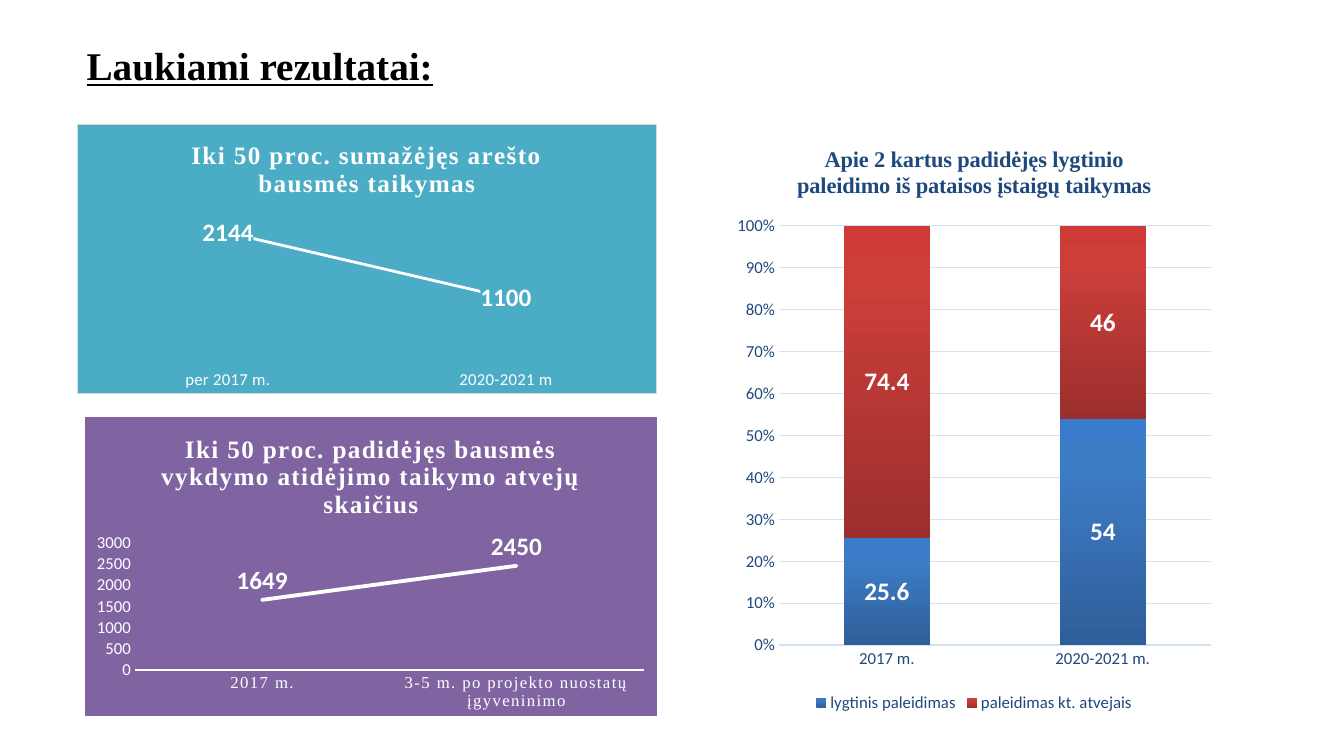
from dataclasses import dataclass
from typing import Optional

from lxml import etree
from pptx import Presentation
from pptx.chart.chart import Chart
from pptx.chart.data import CategoryChartData
from pptx.dml.color import RGBColor
from pptx.enum.chart import XL_CHART_TYPE as ChartType
from pptx.enum.chart import XL_LABEL_POSITION as LabelPos
from pptx.enum.chart import XL_LEGEND_POSITION as LegendPos
from pptx.enum.chart import XL_TICK_MARK as TickMark
from pptx.enum.text import MSO_ANCHOR, PP_ALIGN
from pptx.oxml import parse_xml
from pptx.oxml.ns import nsdecls, qn
from pptx.util import Pt

SERIF, SANS = "Times New Roman", "Calibri"
WHITE, NAVY, PALE = "FFFFFF", "1F497D", "D4E3F4"
TEAL, PURPLE = "4BACC6", "8064A2"


@dataclass
class Gradient:
    dark: str
    middle: str
    bright: str


@dataclass
class Panel:
    box: tuple[float, float, float, float]
    plot: tuple[float, float, float, float]  # fractions of the chart
    kind: ChartType
    title: str
    title_size: float
    ink: str
    categories: list[str]
    series: dict[str, list[float]]
    scale_max: float
    scale_step: float
    label_pos: LabelPos
    fill: Optional[str] = None
    border: Optional[str] = None
    line_width: float = 0
    axis_line: Optional[tuple[str, float]] = None
    axis_font: str = SANS
    title_spacing: int = 0
    axis_spacing: int = 0
    show_values: bool = True
    masked_labels: bool = False
    gradients: tuple[Gradient, ...] = ()


def rgb(value: str) -> RGBColor:
    return RGBColor.from_string(value)


def style_font(font, size: float, color: str, name: str = SANS, bold: bool = False) -> None:
    font.size, font.name, font.bold = Pt(size), name, bold
    font.color.rgb = rgb(color)


def solid(color: str) -> str:
    return f'<a:solidFill><a:srgbClr val="{color}"/></a:solidFill>'


def chart_props(content: str) -> etree._Element:
    return parse_xml(f'<c:spPr {nsdecls("c", "a")}>{content}</c:spPr>')


def place_plot(chart: Chart, plot: tuple[float, float, float, float]) -> None:
    area = chart._chartSpace.chart.plotArea
    for old in area.findall(qn("c:layout")):
        area.remove(old)
    modes = '<c:layoutTarget val="inner"/><c:xMode val="edge"/><c:yMode val="edge"/>'
    sizes = "".join(f'<c:{key} val="{value}"/>' for key, value in zip("xywh", plot))
    area.insert(0, parse_xml(
        f'<c:layout {nsdecls("c")}><c:manualLayout>{modes}{sizes}</c:manualLayout></c:layout>'))


def style_axes(chart: Chart, panel: Panel) -> None:
    category, value = chart.category_axis, chart.value_axis
    for axis, font in ((category, panel.axis_font), (value, SANS)):
        axis.major_tick_mark = axis.minor_tick_mark = TickMark.NONE
        style_font(axis.tick_labels.font, 12, panel.ink, font)
        axis.format.line.fill.background()
    if panel.axis_spacing:
        category._element.find(".//" + qn("a:defRPr")).set("spc", str(panel.axis_spacing))
    if panel.axis_line:
        color, width = panel.axis_line
        category.format.line.color.rgb = rgb(color)
        category.format.line.width = Pt(width)
    value.minimum_scale, value.maximum_scale = 0, panel.scale_max
    value.major_unit = panel.scale_step
    value.visible = panel.show_values
    value.has_major_gridlines = bool(panel.gradients)
    if panel.gradients:
        value.major_gridlines.format.line.color.rgb = rgb(PALE)
        value.major_gridlines.format.line.width = Pt(0.75)
        value.tick_labels.number_format = "0%"
        value.tick_labels.number_format_is_linked = False


def style_series(chart: Chart, panel: Panel) -> None:
    for index, series in enumerate(chart.plots[0].series):
        if panel.gradients:
            shade = panel.gradients[index]
            series.format.fill.gradient()
            stops = series._element.find(".//" + qn("a:gsLst"))
            for stop in list(stops):
                stops.remove(stop)
            for pos, color in ((0, shade.dark), (80000, shade.middle), (100000, shade.bright)):
                stops.append(parse_xml(
                    f'<a:gs {nsdecls("a")} pos="{pos}"><a:srgbClr val="{color}"/></a:gs>'))
            stops.getparent().find(qn("a:lin")).set("ang", str(270 * 60000))
        else:
            series.smooth = False
            series.marker.style = None
            series.marker._element.get_or_add_marker().get_or_add_symbol().set("val", "none")
            series.format.line.color.rgb = rgb(WHITE)
            series.format.line.width = Pt(panel.line_width)
            series._element.find(".//" + qn("a:ln")).set("cap", "rnd")
        labels = series.data_labels
        labels.show_value = True
        labels.position = panel.label_pos
        style_font(labels.font, 18, WHITE, bold=True)
        if panel.masked_labels:
            labels._element.find(qn("c:txPr")).addprevious(chart_props(solid(panel.fill)))


def add_panel(slide, panel: Panel) -> None:
    data = CategoryChartData()
    data.categories = panel.categories
    for name, values in panel.series.items():
        data.add_series(name, values)
    chart = slide.shapes.add_chart(panel.kind, *map(Pt, panel.box), data).chart
    style_font(chart.font, 10, "000000")
    chart.plots[0].vary_by_categories = False

    # Heading
    heading = chart.chart_title.text_frame
    heading.text = panel.title
    run = heading.paragraphs[0].runs[0]
    style_font(run.font, panel.title_size, panel.ink, SERIF, True)
    run._r.get_or_add_rPr().set("spc", str(panel.title_spacing))
    chart.chart_title.include_in_layout = False

    style_axes(chart, panel)
    style_series(chart, panel)
    place_plot(chart, panel.plot)

    # Legend and background
    chart.has_legend = bool(panel.gradients)
    if panel.gradients:
        chart.plots[0].gap_width, chart.plots[0].overlap = 150, 100
        chart.legend.position = LegendPos.BOTTOM
        chart.legend.include_in_layout = False
        style_font(chart.legend.font, 12, NAVY)
    fill = solid(panel.fill) if panel.fill else "<a:noFill/>"
    edge = solid(panel.border) if panel.border else "<a:noFill/>"
    chart._chartSpace.chart.addnext(chart_props(f'{fill}<a:ln w="{Pt(0.75)}">{edge}</a:ln>'))


PANELS = [
    Panel((54.7, 88.6, 414.7, 193), (0.02, 0.32, 0.96, 0.575), ChartType.LINE,
          "Iki 50 proc. sumažėjęs arešto bausmės taikymas", 18, WHITE,
          ["per 2017 m.", "2020-2021 m"], {"Series 1": [2144, 1100]}, 2500, 500,
          LabelPos.CENTER, TEAL, "D9D9D9", 2, title_spacing=100, axis_spacing=20,
          show_values=False, masked_labels=True),
    Panel((519.8, 88.6, 352.1, 423.4), (0.104, 0.172, 0.876, 0.707),
          ChartType.COLUMN_STACKED_100,
          "Apie 2 kartus padidėjęs lygtinio paleidimo iš pataisos įstaigų taikymas", 16, NAVY,
          ["2017 m.", "2020-2021 m."],
          {"lygtinis paleidimas": [25.6, 54], "paleidimas kt. atvejais": [74.4, 46]}, 1, 0.1,
          LabelPos.CENTER, axis_line=(PALE, 0.75),
          gradients=(Gradient("2F5F99", "3D7CC7", "3A7CCB"),
                     Gradient("9C2F2D", "CB3E3A", "CE3B37"))),
    Panel((60.5, 298.1, 409, 213.1), (0.087, 0.419, 0.89, 0.43), ChartType.LINE,
          "Iki 50 proc. padidėjęs bausmės vykdymo atidėjimo taikymo atvejų skaičius", 18, WHITE,
          ["2017 m.", "3-5 m. po projekto nuostatų įgyveninimo"],
          {"Series 1": [1649, 2450]}, 3000, 500,
          LabelPos.ABOVE, PURPLE, PURPLE, 2.75, axis_line=(WHITE, 1), axis_font=SERIF,
          title_spacing=100, axis_spacing=100),
]


def main() -> None:
    deck = Presentation()
    deck.slide_width, deck.slide_height = Pt(960), Pt(540)
    slide = deck.slides.add_slide(deck.slide_layouts[5])

    # Slide title
    title = slide.shapes.title
    title.left, title.top, title.width, title.height = map(Pt, (54.7, 21.6, 749.5, 49.7))
    frame = title.text_frame
    frame.text = "Laukiami rezultatai:"
    frame.vertical_anchor = MSO_ANCHOR.MIDDLE
    frame.paragraphs[0].alignment = PP_ALIGN.LEFT
    title_font = frame.paragraphs[0].runs[0].font
    style_font(title_font, 28, "000000", SERIF, True)
    title_font.underline = True

    # Charts
    for panel in PANELS:
        add_panel(slide, panel)
    deck.save("out.pptx")


if __name__ == "__main__":
    main()
